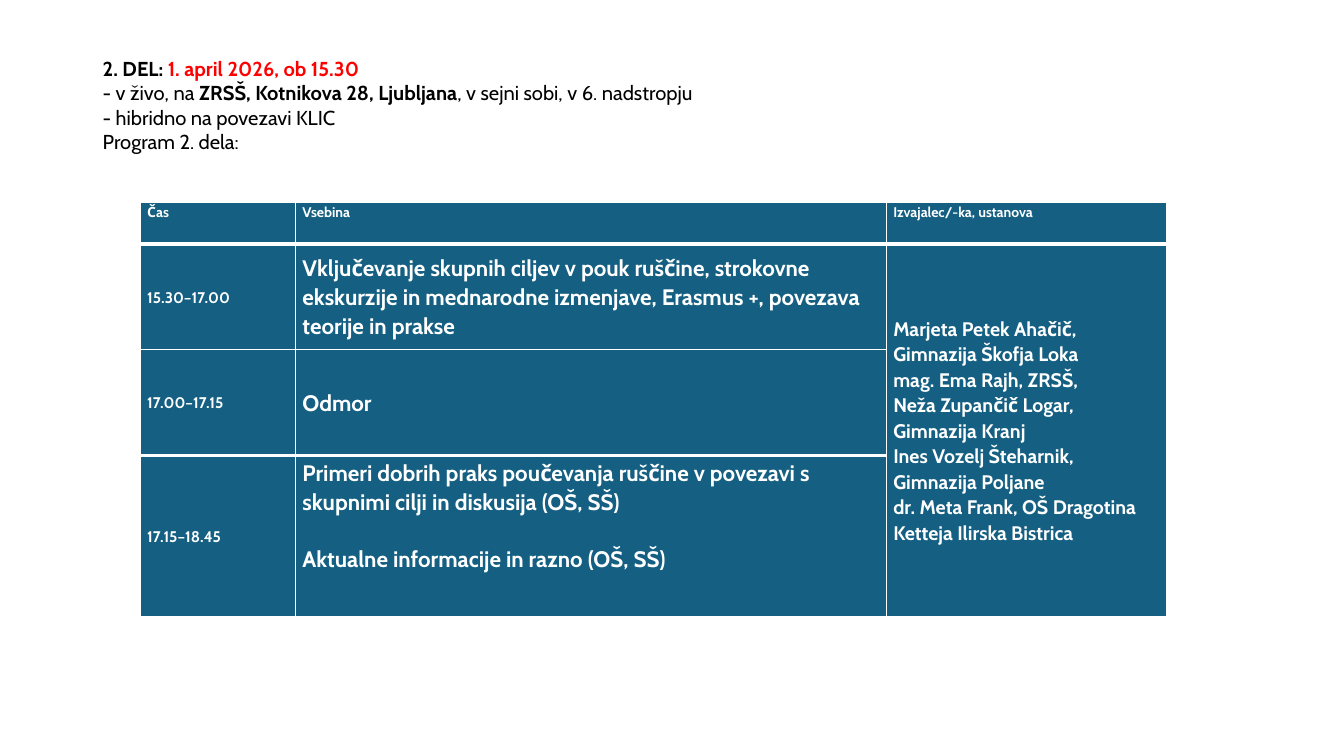
"""Builds the programme slide for part two of the meeting."""
from dataclasses import dataclass

from lxml.etree import SubElement
from pptx import Presentation
from pptx.dml.color import RGBColor as Rgb
from pptx.enum.text import MSO_ANCHOR as Anchor, PP_ALIGN as Align
from pptx.oxml.ns import qn
from pptx.util import Inches, Pt


@dataclass(frozen=True)
class Theme:
    """Colours and type sizes of the slide."""
    font: str = "Cabin"
    ink: str = "000000"
    accent: str = "FF0000"
    paper: str = "FFFFFF"
    panel: str = "156082"
    intro: float = 14.4
    header: float = 10
    time: float = 11
    content: float = 16
    speakers: float = 14
    thin: float = 1
    thick: float = 3


def assign(target, values):
    """Set every attribute in values on target."""
    for key, value in values.items():
        setattr(target, key, value)


class ProgrammeSlide:
    """Holds the theme and the slide being drawn."""

    def __init__(self, slide, theme):
        """Keep the slide and its theme."""
        self.slide, self.theme = slide, theme

    def style(self, font, size, colour, bold):
        """Format a font."""
        assign(font, {"name": self.theme.font, "size": Pt(size), "bold": bold})
        font.color.rgb = Rgb.from_string(colour)

    def intro(self, lines, left, top, width, height):
        """Add the opening text, one list of runs for each line."""
        frame = self.slide.shapes.add_textbox(
            *map(Inches, (left, top, width, height))).text_frame
        assign(frame, {"word_wrap": True, "vertical_anchor": Anchor.TOP,
                       "margin_top": 0, "margin_bottom": 0})
        paragraph = frame.paragraphs[0]
        for index, line in enumerate(lines):
            if index:
                paragraph.add_line_break()
            for wording, colour, bold in line:
                run = paragraph.add_run()
                run.text = wording
                self.style(run.font, self.theme.intro, colour, bold)

    def border(self, cell, widths):
        """Draw cell edges in the order left, right, top, bottom."""
        properties = cell._tc.get_or_add_tcPr()
        for side, width in zip("LRTB", widths):
            edge = SubElement(properties, qn(f"a:ln{side}"), w=str(Pt(width)))
            paint = SubElement(edge, qn("a:solidFill"))
            SubElement(paint, qn("a:srgbClr"), val=self.theme.paper)

    def fill_cell(self, cell, paragraphs, size, anchor, align, gap, top):
        """Write the paragraphs of one cell."""
        assign(cell, {"margin_left": Inches(0.07), "margin_right": Inches(0.07),
                      "margin_top": Inches(top), "margin_bottom": 0,
                      "vertical_anchor": anchor})
        for index, wording in enumerate(paragraphs):
            frame = cell.text_frame
            paragraph = frame.add_paragraph() if index else frame.paragraphs[0]
            assign(paragraph, {"alignment": align, "line_spacing": 1.07})
            if index:
                paragraph.space_before = Pt(gap)
            run = paragraph.add_run()
            run.text = wording
            self.style(run.font, size, self.theme.paper, True)

    def programme(self, headings, sessions, speakers, left, top, widths, heights):
        """Add the timetable with one merged speaker cell."""
        theme = self.theme
        table = self.slide.shapes.add_table(
            len(heights), len(widths),
            *map(Inches, (left, top, sum(widths), sum(heights)))).table
        for column, width in zip(table.columns, widths):
            column.width = Inches(width)
        for row, height in zip(table.rows, heights):
            row.height = Inches(height)

        last = len(heights) - 1
        rules = [theme.thin, theme.thick, theme.thin, theme.thick, theme.thin]
        for r in range(last + 1):
            for c in range(len(widths)):
                cell = table.cell(r, c)
                merged = c == 2 and r > 0
                upper = theme.thin if merged and r > 1 else rules[r]
                lower = theme.thin if merged else rules[r + 1]
                self.border(cell, (theme.thin, theme.thin, upper, lower))
                cell.fill.solid()
                cell.fill.fore_color.rgb = Rgb.from_string(theme.panel)
        table.cell(1, 2).merge(table.cell(last, 2))

        for c, heading in enumerate(headings):
            self.fill_cell(table.cell(0, c), [heading], theme.header,
                           Anchor.TOP, Align.JUSTIFY, 0, 0)
        for r, (time, topics) in enumerate(sessions, 1):
            self.fill_cell(table.cell(r, 0), [time], theme.time,
                           Anchor.MIDDLE, Align.LEFT, 0, 0)
            several = len(topics) > 1
            self.fill_cell(table.cell(r, 1), topics, theme.content,
                           Anchor.TOP if several else Anchor.MIDDLE,
                           Align.LEFT, 20, 0.03 if several else 0)
        self.fill_cell(table.cell(1, 2), speakers, theme.speakers,
                       Anchor.MIDDLE, Align.LEFT, 0, 0)


def main():
    """Build and save the presentation."""
    deck = Presentation()
    assign(deck, {"slide_width": Inches(13.33), "slide_height": Inches(7.5)})
    theme = Theme()
    page = ProgrammeSlide(deck.slides.add_slide(deck.slide_layouts[6]), theme)
    page.intro([
        [("2. DEL: ", theme.ink, True),
         ("1. april 2026, ob 15.30", theme.accent, True)],
        [("- v živo, na ", theme.ink, False),
         ("ZRSŠ, Kotnikova 28, Ljubljana", theme.ink, True),
         (", v sejni sobi, v 6. nadstropju", theme.ink, False)],
        [("- hibridno na povezavi KLIC", theme.ink, False)],
        [("Program 2. dela:", theme.ink, False)],
    ], 0.92, 0.56, 11.5, 1.12)
    page.programme(
        ["Čas", "Vsebina", "Izvajalec/-ka, ustanova"],
        [("15.30–17.00", ["Vključevanje skupnih ciljev v pouk ruščine, strokovne "
                          "ekskurzije in mednarodne izmenjave, Erasmus +, "
                          "povezava teorije in prakse"]),
         ("17.00–17.15", ["Odmor"]),
         ("17.15–18.45", ["Primeri dobrih praks poučevanja ruščine v povezavi s "
                          "skupnimi cilji in diskusija (OŠ, SŠ)",
                          "Aktualne informacije in razno (OŠ, SŠ)"])],
        ["Marjeta Petek Ahačič, Gimnazija Škofja Loka",
         "mag. Ema Rajh, ZRSŠ,",
         "Neža Zupančič Logar, Gimnazija Kranj",
         "Ines Vozelj Šteharnik, Gimnazija Poljane",
         "dr. Meta Frank, OŠ Dragotina Ketteja Ilirska Bistrica"],
        1.39, 2.01, [1.54, 5.86, 2.78], [0.41, 1.05, 1.05, 1.6])
    deck.save("out.pptx")


if __name__ == "__main__":
    main()
